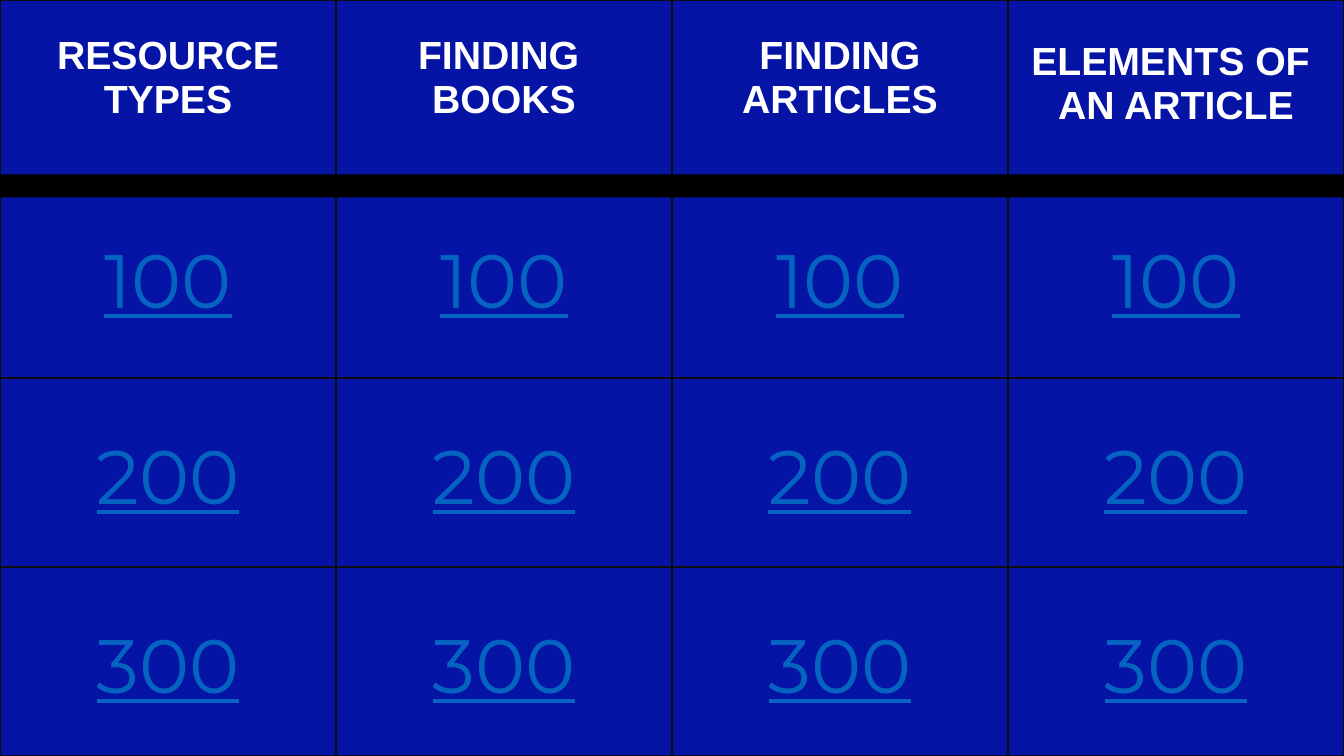
from lxml.etree import SubElement
from pptx import Presentation
from pptx.dml.color import RGBColor
from pptx.enum.shapes import MSO_SHAPE
from pptx.enum.text import PP_ALIGN
from pptx.oxml.ns import qn
from pptx.util import Inches, Pt

WIDTH, HEIGHT = 13.33, 7.5
CATEGORIES = ["RESOURCE TYPES", "FINDING \nBOOKS", "FINDING ARTICLES", "ELEMENTS OF \nAN ARTICLE"]
CATEGORY_TOPS = [0.34, 0.34, 0.34, 0.4]
POINT_TOPS = {"100": 0.46, "200": 0.53, "300": 0.53}


def paint(fill, hex_color):
    fill.solid()
    fill.fore_color.rgb = RGBColor.from_string(hex_color)


class GameBoard:
    BOARD = "0514A5"
    GRID = "0D0D0D"
    BAR = "000000"
    CATEGORY = {"name": "Arial", "size": 28, "color": "FFFFFF", "bold": True}
    POINTS = {"name": "Montserrat", "size": 54, "color": "0563C1", "underline": True}

    def __init__(self, slide):
        self.slide = slide

    def add_grid(self, rows, columns):
        grid = self.slide.shapes.add_table(
            rows, columns, 0, 0, Inches(WIDTH), Inches(HEIGHT)).table
        grid.first_row = grid.horz_banding = False
        for row in grid.rows:
            row.height = Inches(HEIGHT / rows)
        for column in grid.columns:
            column.width = Inches(WIDTH / columns)
        return grid

    def fill_cell(self, cell, text, top, style):
        """Write centred text that starts the given inches below the cell's top."""
        cell.margin_top = Inches(top)
        cell.text = text
        for paragraph in cell.text_frame.paragraphs:
            paragraph.alignment = PP_ALIGN.CENTER
            font = paragraph.font
            font.name = style["name"]
            font.size = Pt(style["size"])
            font.bold = style.get("bold", False)
            font.underline = style.get("underline", False)
            paint(font.fill, style["color"])
        self.add_borders(cell)
        paint(cell.fill, self.BOARD)

    def add_borders(self, cell):
        properties = cell._tc.get_or_add_tcPr()
        for side in ("a:lnL", "a:lnR", "a:lnT", "a:lnB"):
            border = SubElement(properties, qn(side), w=str(Pt(1)))
            solid = SubElement(border, qn("a:solidFill"))
            SubElement(solid, qn("a:srgbClr"), val=self.GRID)

    def add_bar(self, top, height):
        bar = self.slide.shapes.add_shape(
            MSO_SHAPE.RECTANGLE, 0, Inches(top), Inches(WIDTH), Inches(height))
        bar.shadow.inherit = False
        paint(bar.fill, self.BAR)
        bar.line.fill.background()


def main():
    deck = Presentation()
    deck.slide_width, deck.slide_height = Inches(WIDTH), Inches(HEIGHT)
    board = GameBoard(deck.slides.add_slide(deck.slide_layouts[6]))

    grid = board.add_grid(1 + len(POINT_TOPS), len(CATEGORIES))
    for column, (category, category_top) in enumerate(zip(CATEGORIES, CATEGORY_TOPS)):
        board.fill_cell(grid.cell(0, column), category, category_top, board.CATEGORY)
        for row, (points, points_top) in enumerate(POINT_TOPS.items(), start=1):
            board.fill_cell(grid.cell(row, column), points, points_top, board.POINTS)
    board.add_bar(1.73, 0.23)

    deck.save("out.pptx")


if __name__ == "__main__":
    main()
